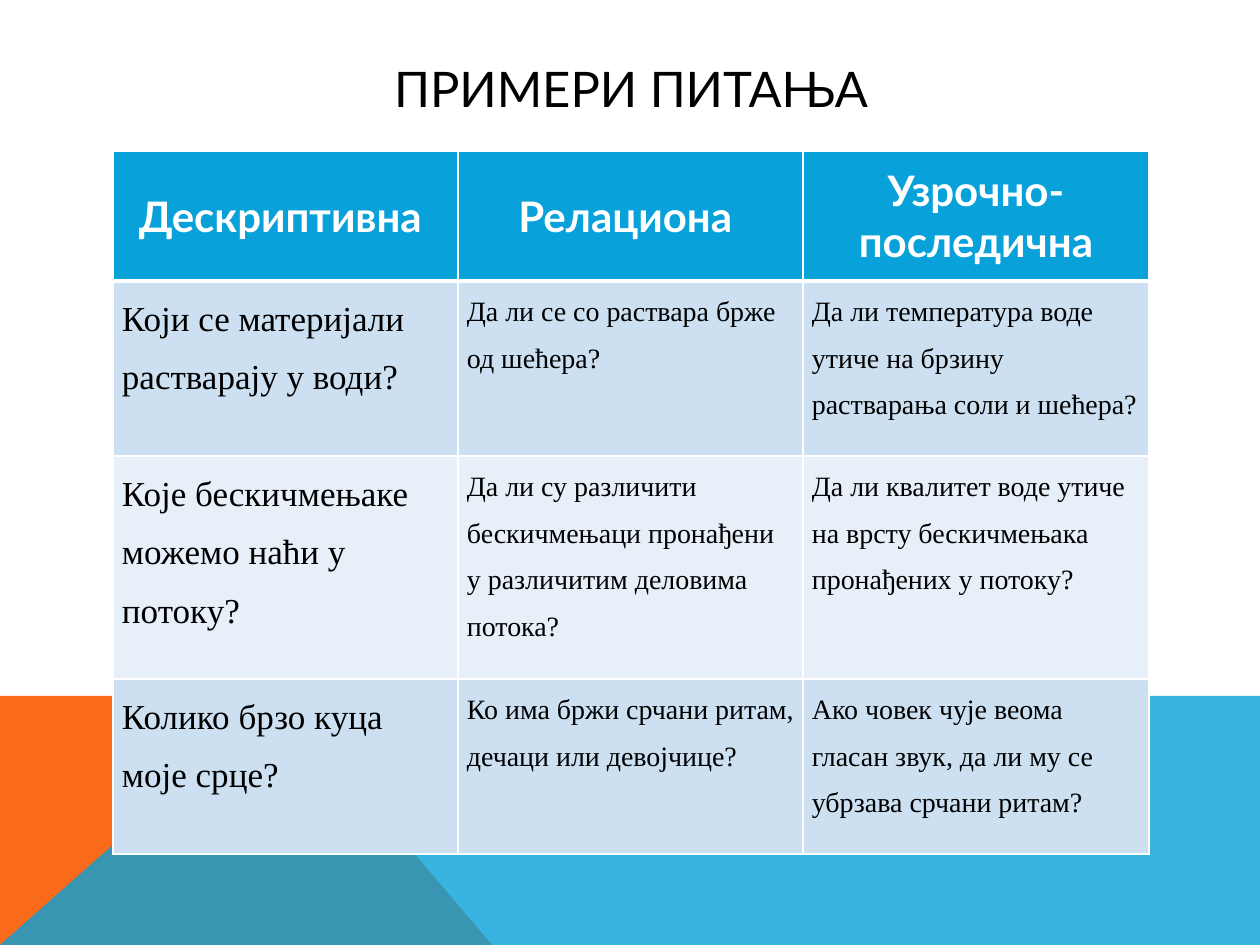
from lxml.etree import SubElement
from pptx import Presentation
from pptx.dml.color import RGBColor
from pptx.enum.text import MSO_ANCHOR as Anchor, MSO_AUTO_SIZE as AutoSize, PP_ALIGN as Align
from pptx.oxml.ns import qn
from pptx.util import Emu, Pt

PX = 914400 / 126
BLACK = RGBColor(0x00, 0x00, 0x00)
WHITE = RGBColor(0xFF, 0xFF, 0xFF)
ORANGE = RGBColor(0xF9, 0x6A, 0x1B)
BLUE = RGBColor(0x08, 0xA1, 0xD9)
BAND_DARK = RGBColor(0xCC, 0xE0, 0xF1)
BAND_LIGHT = RGBColor(0xE7, 0xF0, 0xF8)


def px(*lengths):
    return [Emu(round(length * PX)) for length in lengths]


def format_text(paragraph, look, color):
    paragraph.alignment = look["align"]
    paragraph.line_spacing = look["spacing"]
    font = paragraph.runs[0].font
    for attribute in ("name", "size", "bold"):
        setattr(font, attribute, look[attribute])
    font.color.rgb = color


TITLE = {"name": "Lato", "size": Pt(28), "bold": False, "align": Align.CENTER, "spacing": 1.0}
HEADING = {**TITLE, "size": Pt(24), "bold": True}
QUESTION = {"name": "Times New Roman", "size": Pt(16), "bold": False, "align": Align.LEFT, "spacing": 1.5}
LEAD_QUESTION = {**QUESTION, "size": Pt(20)}

deck = Presentation()
deck.slide_width, deck.slide_height = px(1260, 945)
slide = deck.slides.add_slide(deck.slide_layouts[5])

bands = [
    ([(0, 945), (0, 696), (281, 696), (492, 945)], ORANGE, 100),
    ([(0, 945), (281, 696), (1260, 696), (1260, 945)], BLUE, 80),
]
for corners, color, opacity in bands:
    builder = slide.shapes.build_freeform(*corners[0], scale=PX)
    builder.add_line_segments(corners[1:], close=True)
    band = builder.convert_to_shape()
    band.shadow.inherit = False
    band.line.fill.background()
    band.fill.solid()
    band.fill.fore_color.rgb = color
    if opacity < 100:
        tint = band.fill._xPr.find(qn("a:solidFill"))[0]
        SubElement(tint, qn("a:alpha"), val=str(opacity * 1000))

title = slide.shapes.title
title.left, title.top, title.width, title.height = px(113, 50, 1036, 76)
title.text_frame.text = "ПРИМЕРИ ПИТАЊА"
title.text_frame.auto_size = AutoSize.NONE
title.text_frame.vertical_anchor = Anchor.MIDDLE
format_text(title.text_frame.paragraphs[0], TITLE, BLACK)

questions = [
    ["Дескриптивна ", "Релациона ", "Узрочно-последична"],
    ["Који се материјали растварају у води?",
     "Да ли се со раствара брже од шећера?",
     "Да ли температура воде утиче на брзину растварања соли и шећера?"],
    ["Које бескичмењаке можемо наћи у потоку?",
     "Да ли су различити бескичмењаци пронађени у различитим деловима потока?",
     "Да ли квалитет воде утиче на врсту бескичмењака пронађених у потоку?"],
    ["Колико брзо куца моје срце?",
     "Ко има бржи срчани ритам, дечаци или девојчице?",
     "Ако човек чује веома гласан звук, да ли му се убрзава срчани ритам?"],
]
row_heights = px(130, 175, 223, 175)
table = slide.shapes.add_table(4, 3, *px(113, 151, 1036, 703)).table
for column, width in zip(table.columns, px(345, 345, 346)):
    column.width = width

for r, (row_texts, height) in enumerate(zip(questions, row_heights)):
    table.rows[r].height = height
    for c, text in enumerate(row_texts):
        cell = table.cell(r, c)
        cell.text = text
        if r == 0:
            look, color, fill = HEADING, WHITE, BLUE
            cell.vertical_anchor = Anchor.MIDDLE
        else:
            look, color = (QUESTION if c else LEAD_QUESTION), BLACK
            fill = BAND_DARK if r % 2 else BAND_LIGHT
            cell.vertical_anchor = Anchor.TOP
            cell.margin_left, cell.margin_right, cell.margin_top, cell.margin_bottom = px(9, 9, 0, 0)
        format_text(cell.text_frame.paragraphs[0], look, color)
        cell_format = cell._tc.get_or_add_tcPr()
        for side in "LRTB":
            thick = (r, side) in [(0, "B"), (1, "T")]
            border = SubElement(cell_format, qn(f"a:ln{side}"), w=str(Pt(3 if thick else 1)))
            SubElement(SubElement(border, qn("a:solidFill")), qn("a:srgbClr"), val=str(WHITE))
        cell.fill.solid()
        cell.fill.fore_color.rgb = fill

deck.save("out.pptx")
